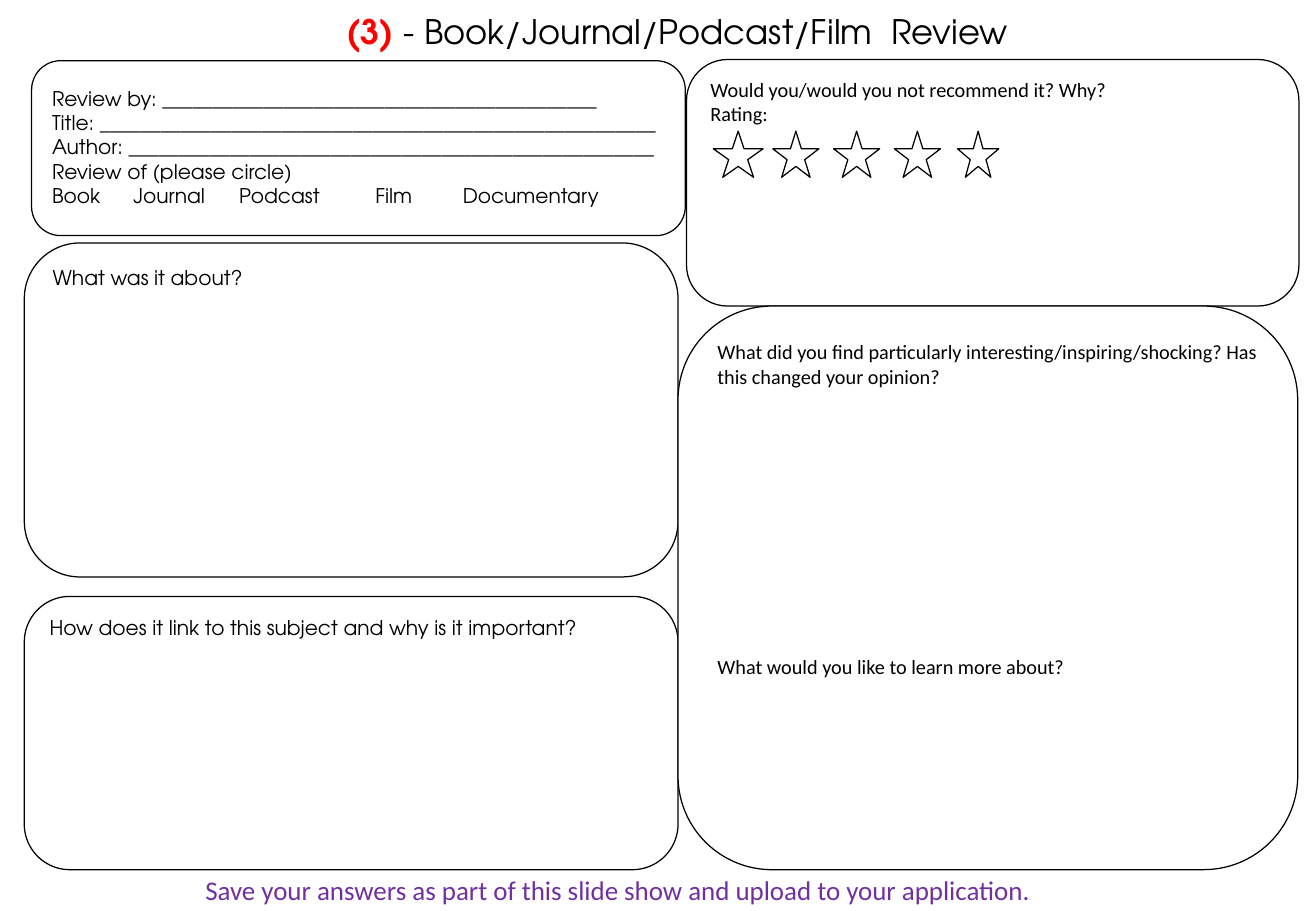
from dataclasses import dataclass

from lxml import etree
from pptx import Presentation
from pptx.dml.color import RGBColor
from pptx.enum.shapes import MSO_SHAPE
from pptx.enum.text import MSO_ANCHOR, MSO_AUTO_SIZE, PP_ALIGN
from pptx.oxml.ns import qn
from pptx.util import Inches, Pt

PANEL = MSO_SHAPE.FLOWCHART_ALTERNATE_PROCESS
RECT = MSO_SHAPE.RECTANGLE
STAR = MSO_SHAPE.STAR_5_POINT
TOP = MSO_ANCHOR.TOP
NO_FIT = MSO_AUTO_SIZE.NONE
LEFT = PP_ALIGN.LEFT
CENTER = PP_ALIGN.CENTER


@dataclass(frozen=True)
class Theme:
    white: RGBColor = RGBColor(255, 255, 255)
    black: RGBColor = RGBColor(0, 0, 0)
    red: RGBColor = RGBColor(255, 0, 0)
    purple: RGBColor = RGBColor(0x70, 0x30, 0xA0)
    display: str = "TeX Gyre Adventor"
    plain: str = "Calibri"
    title: Pt = Pt(20)
    footer: Pt = Pt(16)
    body: Pt = Pt(12)
    line: Pt = Pt(0.75)


THEME = Theme()

ABOUT = "What was it about?"
LINK = "How does it link to this subject and why is it important?"
RECOMMEND = ["Would you/would you not recommend it? Why?", "Rating:"]
OPINION = [
    "What did you find particularly interesting/inspiring/shocking? "
    "Has this changed your opinion?",
    "What would you like to learn more about?",
]
DETAILS = [
    "Review by: " + "_" * 43,
    "Title: " + "_" * 55,
    "Author: " + "_" * 52,
    "Review of (please circle)",
    "Book\tJournal\tPodcast\tFilm\tDocumentary",
]
MEDIA_TABS = [0.67, 1.54, 2.66, 3.38]
STARS = [(5.87, 0.41), (6.36, 0.38), (6.86, 0.38), (7.36, 0.38), (7.88, 0.34)]


def format_run(r, font, size, color, bold=False):
    r.font.name = font
    r.font.size = size
    r.font.color.rgb = color
    r.font.bold = bold


def write(tf, lines, font, size, color, align=LEFT):
    tf.word_wrap = True
    tf.vertical_anchor = TOP
    tf.text = "\n".join(lines)
    for p in tf.paragraphs:
        p.alignment = align
        for r in p.runs:
            format_run(r, font, size, color)


def add_box(slide, kind, box, filled=True, outlined=True):
    sp = slide.shapes.add_shape(kind, *map(Inches, box))
    sp.shadow.inherit = False
    if filled:
        sp.fill.solid()
        sp.fill.fore_color.rgb = THEME.white
    else:
        sp.fill.background()
    if outlined:
        sp.line.color.rgb = THEME.black
        sp.line.width = THEME.line
    else:
        sp.line.fill.background()
    return sp


def add_panel(slide, box, lines, font):
    sp = add_box(slide, PANEL, box)
    write(sp.text_frame, lines, font, THEME.body, THEME.black)
    return sp


def set_tabs(p, stops):
    tabs = etree.SubElement(p._p.get_or_add_pPr(), qn("a:tabLst"))
    for stop in stops:
        etree.SubElement(tabs, qn("a:tab"), pos=str(Inches(stop)), algn="l")


def add_title(slide):
    sp = slide.shapes.title
    sp.left, sp.top, sp.width, sp.height = map(Inches, (2.5, 0.04, 6.15, 0.4))
    tf = sp.text_frame
    tf.auto_size = NO_FIT
    tf.vertical_anchor = TOP
    p = tf.paragraphs[0]
    p.alignment = CENTER
    for text, color, bold in (
        ("(3) ", THEME.red, True),
        ("- Book/Journal/Podcast/Film  Review", THEME.black, False),
    ):
        r = p.add_run()
        r.text = text
        format_run(r, THEME.display, THEME.title, color, bold)


def add_details(slide):
    sp = add_box(slide, RECT, (0.33, 0.66, 5.25, 1.03), outlined=False)
    tf = sp.text_frame
    write(tf, DETAILS, THEME.display, THEME.body, THEME.black)
    set_tabs(tf.paragraphs[-1], MEDIA_TABS)
    add_box(slide, PANEL, (0.26, 0.5, 5.38, 1.44), filled=False)


def add_rating(slide):
    for left, width in STARS:
        add_box(slide, STAR, (left, 1.08, width, 0.38))


def add_footer(slide):
    box = (0, 7.14, 10.17, 0.37)
    sp = slide.shapes.add_textbox(*map(Inches, box))
    text = "Save your answers as part of this slide show and upload to your application."
    write(sp.text_frame, [text], THEME.plain, THEME.footer, THEME.purple, CENTER)


def main():
    prs = Presentation()
    prs.slide_width, prs.slide_height = Inches(10.83), Inches(7.5)
    slide = prs.slides.add_slide(prs.slide_layouts[5])
    add_title(slide)
    add_panel(slide, (5.65, 0.49, 5.04, 2.03), RECOMMEND, THEME.plain)
    add_panel(slide, (0.2, 4.91, 5.38, 2.25), [LINK], THEME.display)
    add_panel(slide, (0.2, 2, 5.38, 2.75), [ABOUT], THEME.display)
    opinion = add_panel(slide, (5.58, 2.52, 5.1, 4.64), OPINION, THEME.plain)
    opinion.text_frame.paragraphs[1].space_before = Pt(158)
    add_details(slide)
    add_rating(slide)
    add_footer(slide)
    prs.save("out.pptx")


if __name__ == "__main__":
    main()
